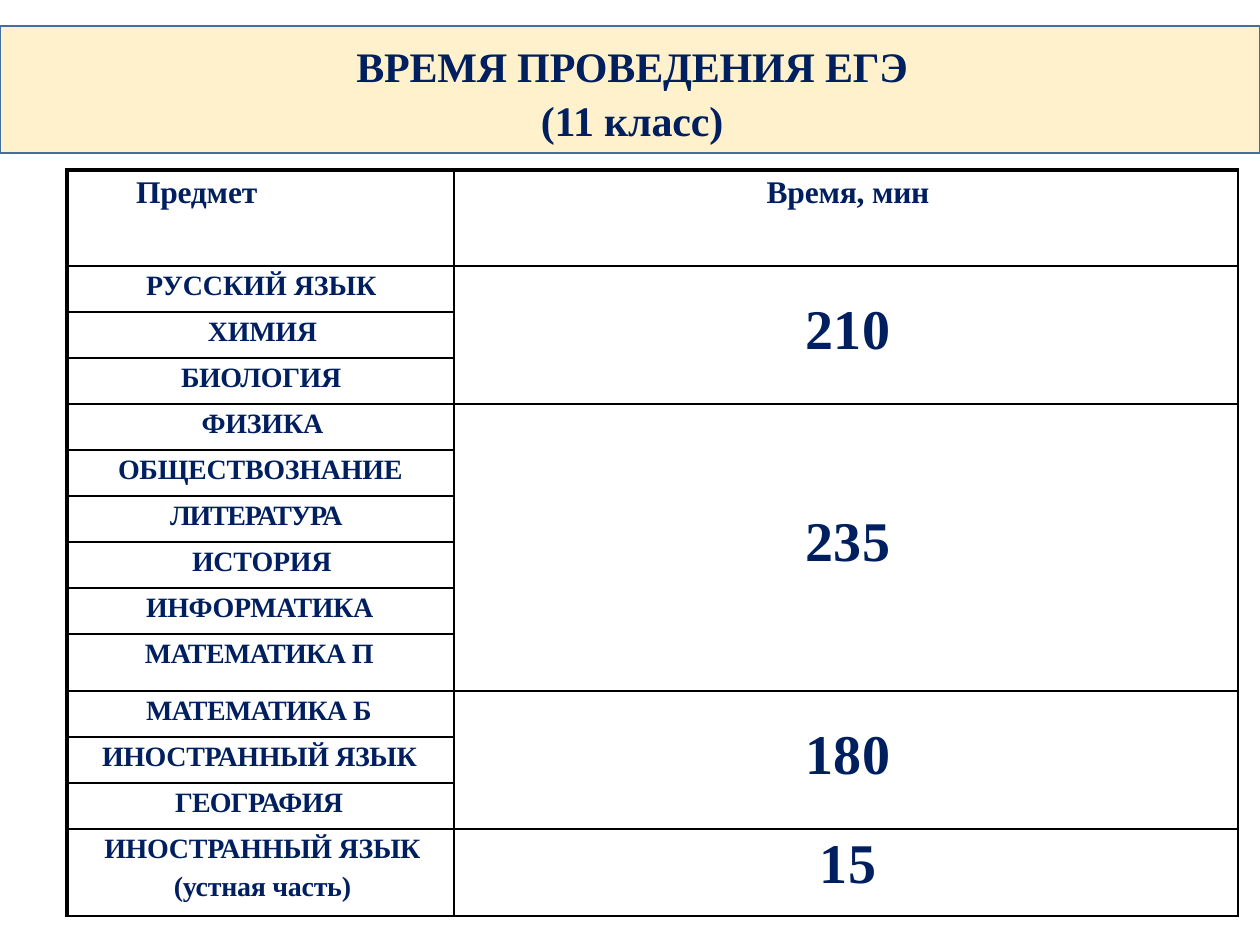
from lxml import etree
from pptx import Presentation
from pptx.dml.color import RGBColor
from pptx.enum.text import MSO_ANCHOR, MSO_AUTO_SIZE, PP_ALIGN
from pptx.oxml.ns import qn
from pptx.util import Emu, Pt

TOP, NO_FIT = MSO_ANCHOR.TOP, MSO_AUTO_SIZE.NONE
LEFT, CENTER = PP_ALIGN.LEFT, PP_ALIGN.CENTER

NAVY = RGBColor(0x00, 0x1F, 0x5F)
CREAM = RGBColor(0xFF, 0xF1, 0xCC)
STEEL = RGBColor(0x41, 0x70, 0x9C)
BLACK = RGBColor(0x00, 0x00, 0x00)
FONT = "Times New Roman"
PX = 914400 / 126
THIN, THICK = 1, 2.25
TITLE_ONLY = 5

TITLE = ["ВРЕМЯ ПРОВЕДЕНИЯ ЕГЭ", "(11 класс)"]
COLUMNS = [387, 784]
HEADER_HEIGHT, ROW_HEIGHT = 96, 46
CENTERED_INDENT = 4
CELL_TOP = 5

# minutes, top margin of the minutes cell, subjects:
# (lines, left indent or None when centred, letter spacing, row height)
GROUPS = [
    ("210", 34, [
        (["РУССКИЙ ЯЗЫК"], 79, 0, ROW_HEIGHT),
        (["ХИМИЯ"], None, -0.1, ROW_HEIGHT),
        (["БИОЛОГИЯ"], 114, -0.2, ROW_HEIGHT),
    ]),
    ("235", 108, [
        (["ФИЗИКА"], None, -0.1, ROW_HEIGHT),
        (["ОБЩЕСТВОЗНАНИЕ"], 51, -0.1, ROW_HEIGHT),
        (["ЛИТЕРАТУРА"], 103, -0.7, ROW_HEIGHT),
        (["ИСТОРИЯ"], 125, -0.1, ROW_HEIGHT),
        (["ИНФОРМАТИКА"], 79, -0.2, ROW_HEIGHT),
        (["МАТЕМАТИКА П"], 78, -0.3, 57),
    ]),
    ("180", 34, [
        (["МАТЕМАТИКА Б"], 79, -0.3, ROW_HEIGHT),
        (["ИНОСТРАННЫЙ ЯЗЫК"], 35, -0.2, ROW_HEIGHT),
        (["ГЕОГРАФИЯ"], 108, -0.4, ROW_HEIGHT),
    ]),
    ("15", CELL_TOP, [
        (["ИНОСТРАННЫЙ ЯЗЫК", "(устная часть)"], None, -0.15, 87),
    ]),
]


def px(length):
    return Emu(round(length * PX))


def write(text_frame, lines, size, spacing=0, indent=None, gap=0):
    """Write one paragraph per line; without an indent the lines are centred."""
    for number, line in enumerate(lines):
        paragraph = text_frame.add_paragraph() if number else text_frame.paragraphs[0]
        paragraph.alignment = CENTER if indent is None else LEFT
        paragraph.space_before = Pt(gap if number else 0)
        paragraph.line_spacing = 1.0
        left = CENTERED_INDENT if indent is None else indent
        properties = paragraph._p.get_or_add_pPr()
        properties.set("marL", str(px(left)))
        properties.set("indent", "0")
        run = paragraph.add_run()
        run.text = line
        run.font.name = FONT
        run.font.size = Pt(size)
        run.font.bold = True
        run.font.color.rgb = NAVY
        run._r.get_or_add_rPr().set("spc", str(round(spacing * 100)))


def set_margins(target, top):
    target.margin_left = target.margin_right = target.margin_bottom = 0
    target.margin_top = px(top)


def set_borders(cell, left, right, top, bottom):
    properties = cell._tc.get_or_add_tcPr()
    widths = {"a:lnL": left, "a:lnR": right, "a:lnT": top, "a:lnB": bottom}
    for position, (tag, width) in enumerate(widths.items()):
        line = etree.Element(qn(tag), w=str(Pt(width)))
        fill = etree.SubElement(line, qn("a:solidFill"))
        etree.SubElement(fill, qn("a:srgbClr"), val=str(BLACK))
        properties.insert(position, line)


def add_title(slide, left, top, width, height):
    title = slide.shapes.title
    title.left, title.top, title.width, title.height = map(px, (left, top, width, height))
    title.fill.solid()
    title.fill.fore_color.rgb = CREAM
    title.line.color.rgb = STEEL
    title.line.width = Pt(1)
    frame = title.text_frame
    frame.auto_size = NO_FIT
    frame.vertical_anchor = TOP
    set_margins(frame, 15)
    write(frame, TITLE, 24, spacing=-0.1, indent=None, gap=1.5)


def add_timetable(slide, left, top):
    subjects = [subject for group in GROUPS for subject in group[2]]
    heights = [HEADER_HEIGHT] + [subject[3] for subject in subjects]
    table = slide.shapes.add_table(
        len(heights), len(COLUMNS), px(left), px(top),
        px(sum(COLUMNS)), px(sum(heights))).table
    table.first_row = table.horz_banding = False
    for column, width in zip(table.columns, COLUMNS):
        column.width = px(width)
    for row_number, (row, height) in enumerate(zip(table.rows, heights)):
        row.height = px(height)
        for column_number, cell in enumerate(row.cells):
            cell.fill.background()
            set_margins(cell, CELL_TOP)
            set_borders(cell, left=THIN if column_number else THICK, right=THIN,
                        top=THIN if row_number else THICK, bottom=THIN)

    write(table.cell(0, 0).text_frame, ["Предмет"], 18, spacing=-0.1, indent=69)
    write(table.cell(0, 1).text_frame, ["Время, мин"], 18, spacing=-0.1)
    row_number = 1
    for minutes, margin, group in GROUPS:
        minutes_cell = table.cell(row_number, 1)
        if len(group) > 1:
            minutes_cell.merge(table.cell(row_number + len(group) - 1, 1))
        set_margins(minutes_cell, margin)
        write(minutes_cell.text_frame, [minutes], 32, spacing=0.1)
        for lines, indent, spacing, _ in group:
            write(table.cell(row_number, 0).text_frame, lines, 16,
                  spacing=spacing, indent=indent, gap=3.8)
            row_number += 1


def main():
    presentation = Presentation()
    presentation.slide_width, presentation.slide_height = px(1260), px(945)
    slide = presentation.slides.add_slide(presentation.slide_layouts[TITLE_ONLY])
    add_title(slide, 0, 26, 1260, 127)
    add_timetable(slide, 67, 170)
    presentation.save("out.pptx")


if __name__ == "__main__":
    main()
